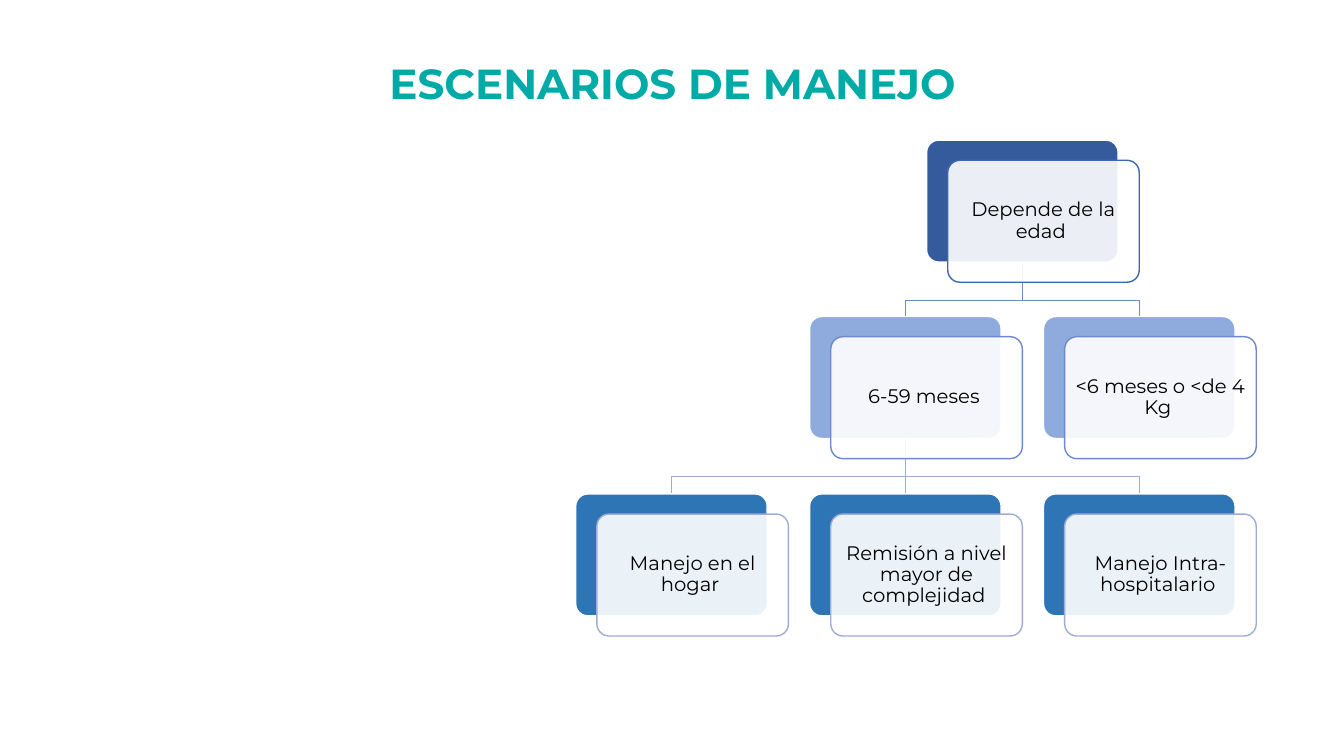
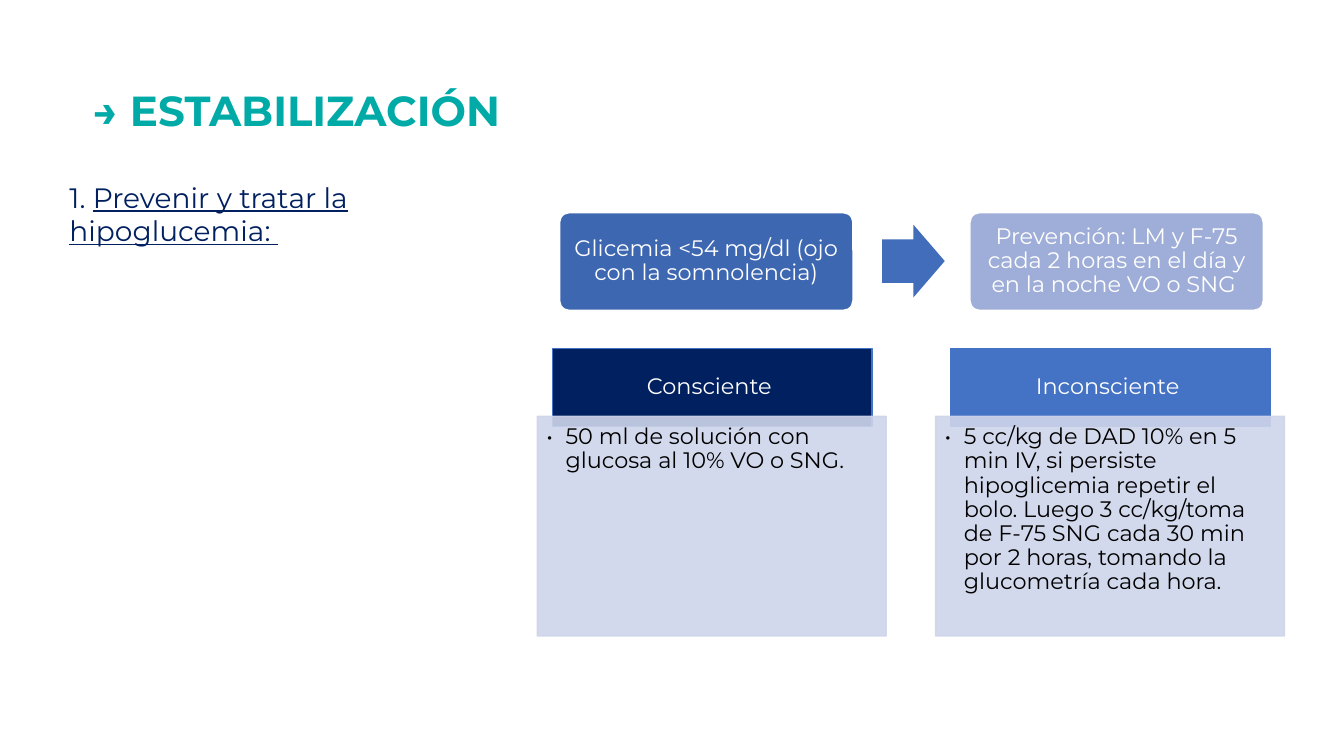
from lxml.etree import SubElement
from pptx import Presentation
from pptx.dml.color import RGBColor
from pptx.enum.shapes import MSO_CONNECTOR, MSO_SHAPE
from pptx.enum.text import MSO_ANCHOR, PP_ALIGN
from pptx.oxml.ns import qn
from pptx.util import Inches, Pt

FONT = "Montserrat"
TEAL, NAVY, BLUE, PALE = "00AAA7", "002060", "4472C4", "CFD5EA"
WHITE, BLACK = "FFFFFF", "000000"

LEVELS = [
    (1.39, "365B9D", "3E67B2", [(1.5, "Depende de la edad ")]),
    (3.14, "8FAADC", "6D89CB",
     [(1, "6-59 meses "), (2, "<6 meses o <de 4 Kg ")]),
    (4.9, "2E75B6", "9EADD8", [
        (0, "Manejo en el hogar "),
        (1, "Remisión a nivel mayor de complejidad "),
        (2, "Manejo Intra-hospitalario "),
    ]),
]
STEPS = [
    ("3E67B2", "Glicemia <54 mg/dl (ojo con la somnolencia)"),
    ("9FAED8", "Prevención: LM y F-75 cada 2 horas en el día y en la noche VO o SNG "),
]
CASES = [
    (NAVY, "Consciente ", "50 ml de solución con glucosa al 10% VO o SNG."),
    (BLUE, "Inconsciente ",
     "5 cc/kg de DAD 10% en 5 min IV, si persiste hipoglicemia repetir el "
     "bolo. Luego 3 cc/kg/toma de F-75 SNG cada 30 min por 2 horas, tomando "
     "la glucometría cada hora."),
]

CARD_W, CARD_H = 1.9, 1.21
LEFT, COL = 5.71, 2.32
SHIFT, DROP = 0.21, 0.38


def rgb(code):
    return RGBColor.from_string(code)


def fade(fmt, share):
    node = fmt._xPr.find(qn("a:solidFill"))[0]
    SubElement(node, qn("a:alpha")).set("val", str(share * 1000))


def block(slide, kind, box, fill, line=None, adj=(), alpha=None):
    shape = slide.shapes.add_shape(kind, *map(Inches, box))
    shape.shadow.inherit = False
    for i, val in enumerate(adj):
        shape.adjustments[i] = val
    shape.fill.solid()
    shape.fill.fore_color.rgb = rgb(fill)
    if line:
        shape.line.color.rgb = rgb(line)
        shape.line.width = Pt(1)
    else:
        shape.line.fill.background()
    if alpha:
        fade(shape.fill, alpha)
    return shape


def style(para, size, color, bold=None, align=PP_ALIGN.CENTER, space=None):
    para.alignment = align
    para.line_spacing = space
    font = para.font
    font.name, font.size, font.bold = FONT, Pt(size), bold
    font.color.rgb = rgb(color)


def write(shape, text, size, color, pads, anchor=MSO_ANCHOR.MIDDLE,
          align=PP_ALIGN.CENTER, bullet=False):
    frame = shape.text_frame
    frame.word_wrap = True
    frame.vertical_anchor = anchor
    (frame.margin_left, frame.margin_top,
     frame.margin_right, frame.margin_bottom) = map(Inches, pads)
    para = frame.paragraphs[0]
    para.text = text
    if bullet:
        props = para._p.get_or_add_pPr()
        props.set("marL", str(Inches(0.19)))
        props.set("indent", str(-Inches(0.19)))
        SubElement(props, qn("a:buFont")).set("typeface", FONT)
        SubElement(props, qn("a:buChar")).set("char", "•")
    style(para, size, color, align=align, space=0.9)


def label(slide, box):
    frame = slide.shapes.add_textbox(*map(Inches, box)).text_frame
    frame.word_wrap = True
    return frame.paragraphs[0]


def title(slide, text, box):
    para = label(slide, box)
    para.text = text
    style(para, 30, TEAL, bold=True)


def link(slide, x1, y1, x2, y2, color):
    if x1 == x2:
        line = slide.shapes.add_connector(
            MSO_CONNECTOR.STRAIGHT, *map(Inches, (x1, y1, x2, y2)))
        SubElement(line._element.spPr, qn("a:effectLst"))
    else:
        bus = y1 + DROP
        path = slide.shapes.build_freeform(Inches(x1), Inches(y1))
        path.add_line_segments(
            [(Inches(x), Inches(y)) for x, y in ((x1, bus), (x2, bus), (x2, y2))],
            close=False)
        line = path.convert_to_shape()
        line.shadow.inherit = False
        line.fill.background()
    line.line.color.rgb = rgb(color)
    line.line.width = Pt(1)


def middle(col):
    return LEFT + col * COL + CARD_W / 2


def links(slide):
    for above, (top, _, color, kids) in zip(LEVELS, LEVELS[1:]):
        stem = middle(above[3][0][0])
        for col, _ in kids:
            link(slide, stem, above[0] + CARD_H, middle(col), top, color)


def cards(slide):
    for top, fill, line, nodes in LEVELS:
        for col, text in nodes:
            x = LEFT + col * COL
            block(slide, MSO_SHAPE.ROUNDED_RECTANGLE,
                  (x, top, CARD_W, CARD_H), fill, WHITE, [0.1])
            front = block(slide, MSO_SHAPE.ROUNDED_RECTANGLE,
                          (x + SHIFT, top + 0.2, CARD_W, CARD_H),
                          WHITE, line, [0.1], 90)
            write(front, text, 14, BLACK, [0.06] * 4)


def steps(slide):
    for i, (fill, text) in enumerate(STEPS):
        step = block(slide, MSO_SHAPE.ROUNDED_RECTANGLE,
                     (5.55 + i * 4.07, 2.11, 2.91, 0.97), fill, WHITE, [0.1])
        write(step, text, 16, WHITE, [0.07] * 4)
    block(slide, MSO_SHAPE.RIGHT_ARROW, (8.75, 2.23, 0.62, 0.72),
          "416DBB", adj=[0.6, 0.5])


def cases(slide):
    for i, (fill, head, text) in enumerate(CASES):
        top = block(slide, MSO_SHAPE.RECTANGLE,
                    (5.48 + i * 3.95, 3.46, 3.17, 0.77), fill, BLUE)
        write(top, head, 16, WHITE, (0.12, 0.07, 0.12, 0.07))
        body = block(slide, MSO_SHAPE.RECTANGLE,
                     (5.33 + i * 3.95, 4.13, 3.46, 2.18),
                     PALE, PALE, alpha=90)
        fade(body.line.fill, 90)
        write(body, text, 16, BLACK, (0.09, 0.09, 0.12, 0.14),
              MSO_ANCHOR.TOP, PP_ALIGN.LEFT, True)


def main():
    deck = Presentation()
    deck.slide_width, deck.slide_height = Inches(13.33), Inches(7.5)
    blank = deck.slide_layouts[6]

    slide = deck.slides.add_slide(blank)
    title(slide, "ESCENARIOS DE MANEJO", (3.51, 0.52, 6.32, 0.61))
    links(slide)
    cards(slide)

    slide = deck.slides.add_slide(blank)
    title(slide, "→ ESTABILIZACIÓN ", (0.59, 0.79, 4.82, 0.61))
    para = label(slide, (0.59, 1.74, 4.82, 0.77))
    para.add_run().text = "1. "
    topic = para.add_run()
    topic.text = "Prevenir y tratar la hipoglucemia: "
    topic.font.underline = True
    style(para, 20, NAVY, align=PP_ALIGN.LEFT)
    steps(slide)
    cases(slide)

    deck.save("out.pptx")


if __name__ == "__main__":
    main()
